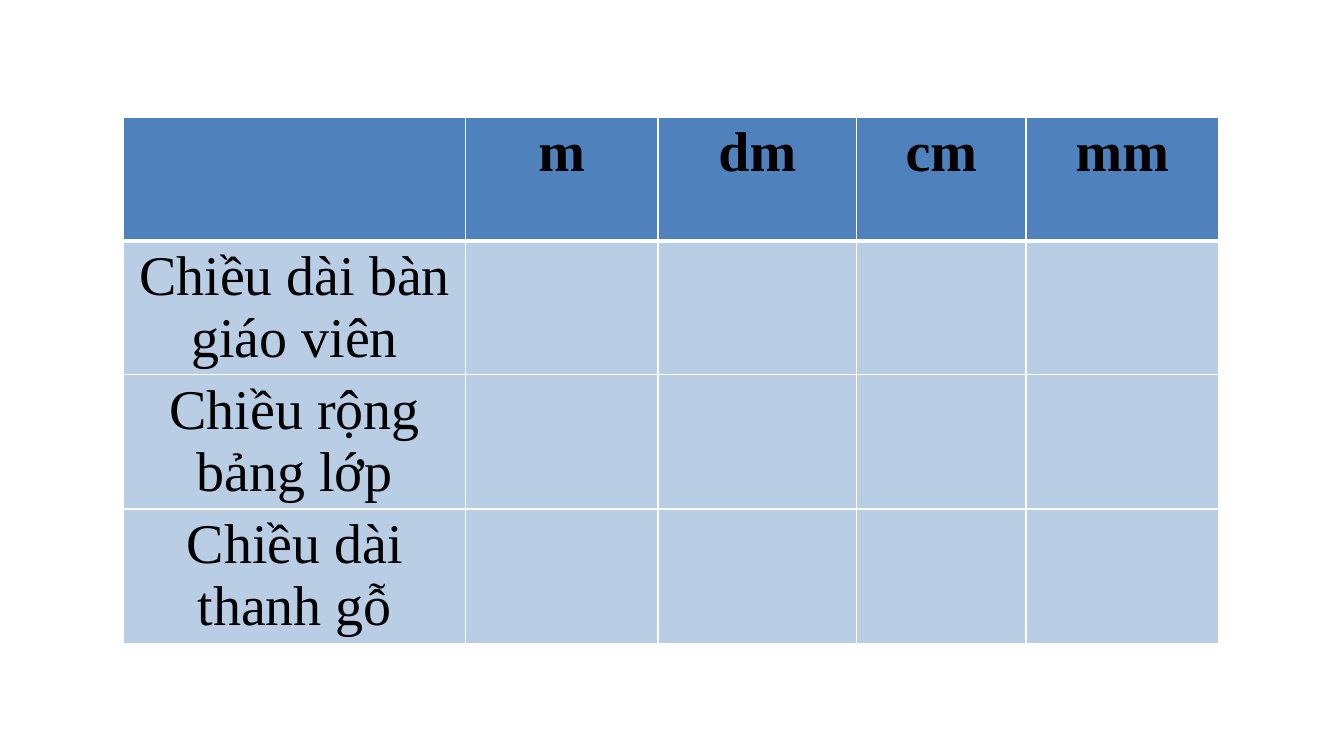
from lxml import etree
from pptx import Presentation
from pptx.dml.color import RGBColor
from pptx.enum.text import PP_ALIGN
from pptx.oxml.ns import qn
from pptx.util import Pt

CENTER = PP_ALIGN.CENTER
BLANK = 6
HEAD_FILL, BODY_FILL = "4F81BD", "B9CDE5"
WHITE, BLACK = "FFFFFF", "000000"
LEFT, TOP = 88.5, 83.5
WIDTHS = [244, 137.5, 142, 121, 137.5]
ROW_HIGH = 88.5
ROWS = [
    ["", "m", "dm", "cm", "mm"],
    ["Chiều dài bàn giáo viên"],
    ["Chiều rộng bảng lớp"],
    ["Chiều dài thanh gỗ"],
]
FONT = {"name": "Times New Roman", "size": Pt(40)}


def color(code):
    return RGBColor.from_string(code)


def add_edges(cell, widths):
    """Draw white borders; widths maps a side (L, R, T, B) to points."""
    props = cell._tc.get_or_add_tcPr()
    for side, width in widths.items():
        line = etree.SubElement(props, qn(f"a:ln{side}"), w=str(Pt(width)))
        fill = etree.SubElement(line, qn("a:solidFill"))
        etree.SubElement(fill, qn("a:srgbClr"), val=WHITE)


def add_text(cell, text, bold):
    para = cell.text_frame.paragraphs[0]
    para.alignment = CENTER
    run = para.add_run()
    run.text = text
    for key, value in {**FONT, "bold": bold}.items():
        setattr(run.font, key, value)
    run.font.color.rgb = color(BLACK)


def add_grid(slide):
    frame = slide.shapes.add_table(
        len(ROWS), len(WIDTHS), Pt(LEFT), Pt(TOP),
        Pt(sum(WIDTHS)), Pt(ROW_HIGH * len(ROWS)))
    table = frame.table
    for column, width in zip(table.columns, WIDTHS):
        column.width = Pt(width)
    for i, texts in enumerate(ROWS):
        head = i == 0
        table.rows[i].height = Pt(ROW_HIGH)
        edges = {"L": 1, "R": 1, "T": 3 if i == 1 else 1, "B": 3 if head else 1}
        for j in range(len(WIDTHS)):
            cell = table.cell(i, j)
            add_edges(cell, edges)
            cell.fill.solid()
            cell.fill.fore_color.rgb = color(HEAD_FILL if head else BODY_FILL)
            if j < len(texts) and texts[j]:
                add_text(cell, texts[j], head)


def main():
    deck = Presentation()
    deck.slide_width, deck.slide_height = Pt(960), Pt(540)
    slide = deck.slides.add_slide(deck.slide_layouts[BLANK])
    add_grid(slide)
    deck.save("out.pptx")


if __name__ == "__main__":
    main()
